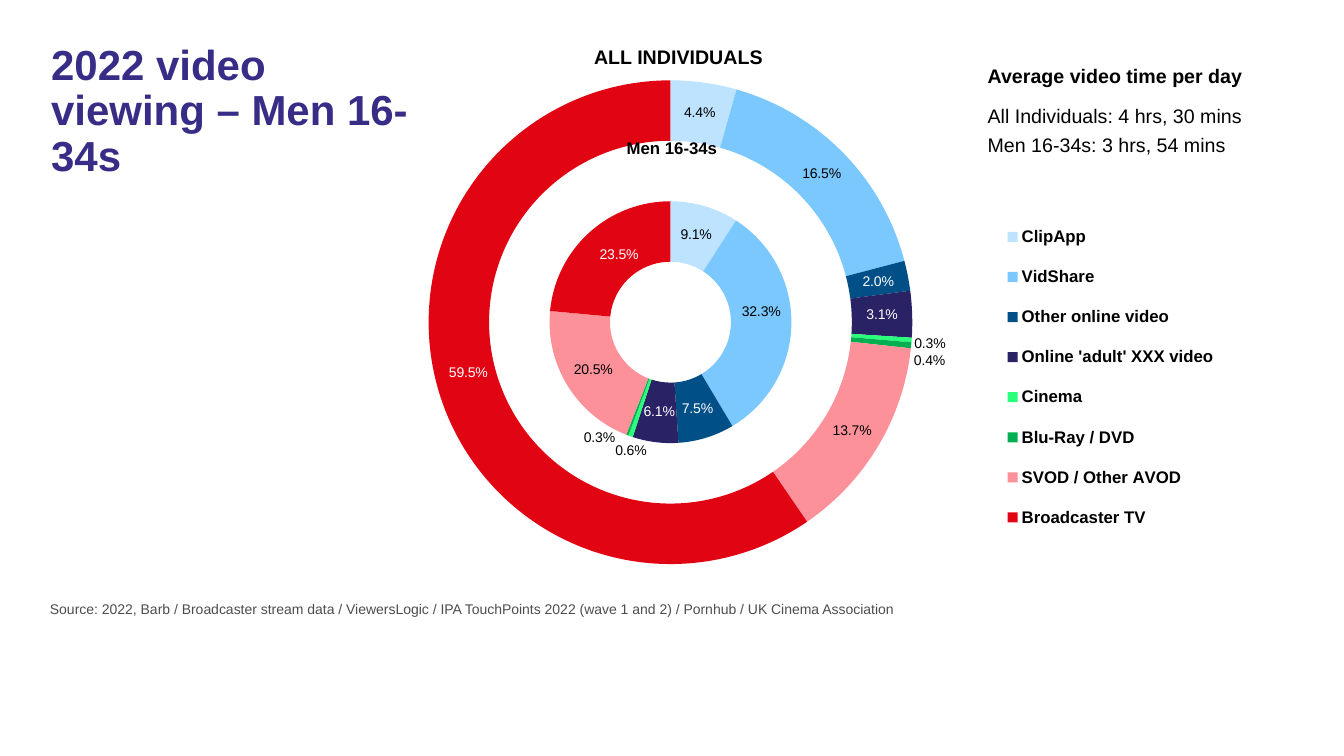
from pptx import Presentation
from pptx.chart.data import CategoryChartData
from pptx.dml.color import RGBColor
from pptx.enum.chart import XL_CHART_TYPE, XL_LEGEND_POSITION
from pptx.enum.text import MSO_ANCHOR, PP_ALIGN
from pptx.oxml import parse_xml
from pptx.oxml.ns import nsdecls, qn
from pptx.util import Cm, Pt

BLACK, WHITE, PURPLE, GREY = "000000", "FFFFFF", "372D87", "4D4D4D"

PLATFORMS = {
    "ClipApp": ("BDE3FF", BLACK),
    "VidShare": ("7BC8FF", BLACK),
    "Other online video": ("004F87", WHITE),
    "Online 'adult' XXX video": ("292265", WHITE),
    "Cinema": ("2AFF7C", BLACK),
    "Blu-Ray / DVD": ("00B050", BLACK),
    "SVOD / Other AVOD": ("FD9199", BLACK),
    "Broadcaster TV": ("E10514", WHITE),
}
RINGS = {
    "Men 16-34s": (9.1, 32.3, 7.5, 6.1, 0.6, 0.3, 20.5, 23.5),
    "Gap": (None,) * len(PLATFORMS),
    "All Individuals": (4.4, 16.5, 2, 3.1, 0.3, 0.4, 13.7, 59.5),
}
LABEL_SHIFTS = {
    ("Men 16-34s", 1): (0, -0.02),
    ("Men 16-34s", 4): (-0.01, 0.07),
    ("Men 16-34s", 5): (-0.04, 0.05),
    ("Men 16-34s", 7): (0.01, 0),
    ("All Individuals", 4): (0.05, 0.01),
    ("All Individuals", 5): (0.05, 0.03),
    ("All Individuals", 7): (0, -0.02),
}


def colour(hex_value):
    """Turn a hex string into a colour."""
    return RGBColor.from_string(hex_value)


def manual_layout(**settings):
    """Build a chart layout element from its settings."""
    parts = "".join(f'<c:{key} val="{value}"/>' for key, value in settings.items())
    return parse_xml(
        f'<c:layout {nsdecls("c")}><c:manualLayout>{parts}</c:manualLayout></c:layout>'
    )


class VideoSlide:
    """Hold the text style and the slide being built."""

    def __init__(self, slide, font="Arial"):
        """Keep the slide and its typeface."""
        self.slide = slide
        self.font = font

    def style(self, font, size, ink=BLACK, bold=False):
        """Apply the house style to a font."""
        for key, value in {"name": self.font, "size": Pt(size), "bold": bold}.items():
            setattr(font, key, value)
        font.color.rgb = colour(ink)

    def text(self, wording, box, size, ink=BLACK, bold=False,
             align=PP_ALIGN.LEFT, spacing=1.0):
        """Add a wrapped text box."""
        frame = self.slide.shapes.add_textbox(*map(Cm, box)).text_frame
        settings = {"word_wrap": True, "vertical_anchor": MSO_ANCHOR.TOP}
        for key, value in settings.items():
            setattr(frame, key, value)
        paragraph = frame.paragraphs[0]
        paragraph.alignment = align
        paragraph.line_spacing = spacing
        run = paragraph.add_run()
        run.text = wording
        self.style(run.font, size, ink, bold)

    def share_label(self, point, ink, shift):
        """Label one slice with its share."""
        label = point.data_label
        self.style(label.font, 10, ink)
        element = label.font._element
        while element.tag != qn("c:dLbl"):
            element = element.getparent()
        number_format = parse_xml(
            f'<c:numFmt {nsdecls("c")} formatCode="0.0&quot;%&quot;" sourceLinked="0"/>'
        )
        element.insert(1, number_format)
        if shift:
            element.insert(1, manual_layout(x=shift[0], y=shift[1]))
        for leader in element.getparent().findall(qn("c:showLeaderLines")):
            leader.set("val", "0")

    def legend(self, chart):
        """Add the platform legend on the right."""
        chart.has_legend = True
        legend = chart.legend
        settings = {"position": XL_LEGEND_POSITION.RIGHT, "include_in_layout": False}
        for key, value in settings.items():
            setattr(legend, key, value)
        self.style(legend.font, 12, bold=True)
        element = legend._element
        for old in element.findall(qn("c:layout")):
            element.remove(old)
        element.find(qn("c:legendPos")).addnext(
            manual_layout(xMode="edge", yMode="edge", x=0.69, y=0.31, w=0.25, h=0.56)
        )

    def doughnut(self, box):
        """Add the rings of viewing shares."""
        shares = CategoryChartData(number_format="0.0")
        shares.categories = list(PLATFORMS)
        for audience, values in RINGS.items():
            shares.add_series(audience, values)
        chart = self.slide.shapes.add_chart(
            XL_CHART_TYPE.DOUGHNUT, *map(Cm, box), shares
        ).chart
        chart.has_title = False
        self.style(chart.font, 18)
        plot = chart.plots[0]
        plot.vary_by_categories = True
        plot._element.find(qn("c:holeSize")).set("val", "47")
        area = plot._element.getparent()
        for old in area.findall(qn("c:layout")):
            area.remove(old)
        area.insert(0, manual_layout(layoutTarget="inner", xMode="edge", yMode="edge",
                                     x=0.11, y=0.09, w=0.5, h=0.82))
        for ring in plot.series:
            for index, (fill, ink) in enumerate(PLATFORMS.values()):
                point = ring.points[index]
                point.format.fill.solid()
                point.format.fill.fore_color.rgb = colour(fill)
                point.format.line.fill.background()
                if ring.name != "Gap":
                    self.share_label(point, ink, LABEL_SHIFTS.get((ring.name, index)))
        self.legend(chart)


def main():
    """Build and save the slide."""
    deck = Presentation()
    deck.slide_width, deck.slide_height = Cm(33.87), Cm(19.05)
    page = VideoSlide(deck.slides.add_slide(deck.slide_layouts[6]))
    page.doughnut((8.12, 0.4, 24.38, 15.44))
    page.text("2022 video viewing – Men 16-34s", (1.04, 0.99, 9.7, 7.01), 30,
              PURPLE, bold=True, spacing=0.9)
    page.text("Average video time per day", (24.64, 1.49, 9.2, 0.86), 14, bold=True)
    page.text("All Individuals: 4 hrs, 30 mins", (24.64, 2.49, 7.6, 0.86), 14)
    page.text("Men 16-34s: 3 hrs, 54 mins", (24.64, 3.22, 7.6, 0.86), 14)
    page.text("ALL INDIVIDUALS", (14.65, 1, 4.9, 0.86), 14, bold=True,
              align=PP_ALIGN.CENTER)
    page.text("Men 16-34s", (15.17, 3.35, 3.53, 0.76), 12, bold=True,
              align=PP_ALIGN.CENTER)
    page.text(
        "Source: 2022, Barb / Broadcaster stream data / ViewersLogic / "
        "IPA TouchPoints 2022 (wave 1 and 2) / Pornhub / UK Cinema Association",
        (1.01, 15.01, 31.5, 0.84), 10, GREY)
    deck.save("out.pptx")


if __name__ == "__main__":
    main()
